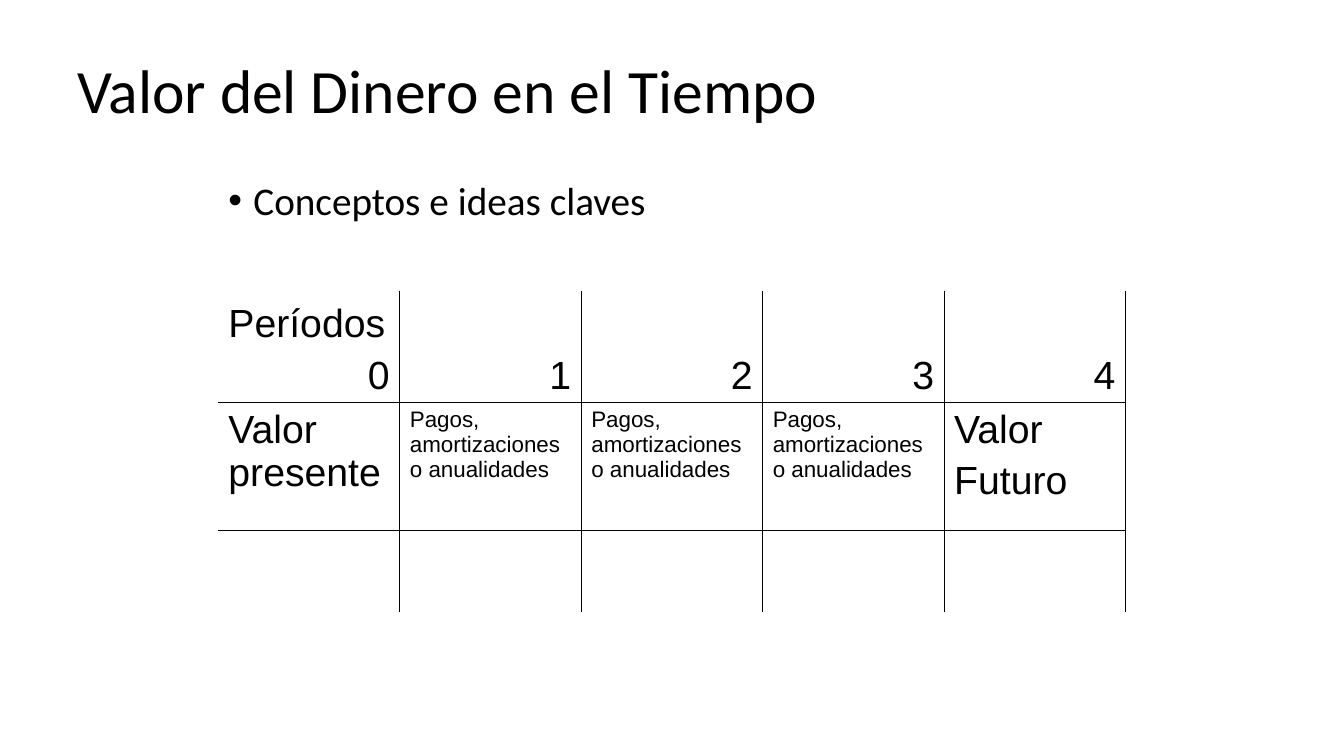
import lxml.etree
import pptx
import pptx.dml.color
import pptx.enum.text
import pptx.oxml.ns
import pptx.util

COLORS = {"text": "000000", "line": "000000", "background": "FFFFFF"}
NO_TABLE_STYLE = "{2D5ABB26-0587-4C30-8999-92F81FD0307C}"
LEFT = pptx.enum.text.PP_ALIGN.LEFT
RIGHT = pptx.enum.text.PP_ALIGN.RIGHT
TOP = pptx.enum.text.MSO_ANCHOR.TOP
MIDDLE = pptx.enum.text.MSO_ANCHOR.MIDDLE
BOTTOM = pptx.enum.text.MSO_ANCHOR.BOTTOM


def points(*values):
    return [pptx.util.Pt(value) for value in values]


def color(name):
    return pptx.dml.color.RGBColor.from_string(COLORS[name])


def add_element(parent, tag, **attributes):
    return lxml.etree.SubElement(parent, pptx.oxml.ns.qn(tag), attributes)


class SlideBuilder:
    heading_font = "Calibri"
    table_font = "Arial"
    border_width = 1

    def __init__(self, slide):
        self.slide = slide
        slide.background.fill.solid()
        slide.background.fill.fore_color.rgb = color("background")

    def style_paragraph(self, paragraph, text, font, size, align=LEFT):
        paragraph.text = text
        paragraph.alignment = align
        paragraph.font.name = font
        paragraph.font.size = pptx.util.Pt(size)
        paragraph.font.color.rgb = color("text")

    def add_text(self, text, box, size, anchor=TOP, bullet=False):
        frame = self.slide.shapes.add_textbox(*points(*box)).text_frame
        frame.word_wrap = True
        frame.vertical_anchor = anchor
        paragraph = frame.paragraphs[0]
        self.style_paragraph(paragraph, text, self.heading_font, size)
        paragraph.line_spacing = 0.9
        if bullet:
            paragraph.space_before = pptx.util.Pt(10)
            properties = paragraph._p.get_or_add_pPr()
            indent = pptx.util.Pt(18)
            properties.set("marL", str(indent))
            properties.set("indent", str(-indent))
            add_element(properties, "a:buFont", typeface="Arial")
            add_element(properties, "a:buChar", char="•")
            default_run = properties.find(pptx.oxml.ns.qn("a:defRPr"))
            if default_run is not None:
                properties.append(default_run)

    def add_border(self, cell, side):
        width = str(pptx.util.Pt(self.border_width))
        line = add_element(cell._tc.get_or_add_tcPr(), f"a:ln{side}", w=width)
        fill = add_element(line, "a:solidFill")
        add_element(fill, "a:srgbClr", val=COLORS["line"])

    def fill_cell(self, cell, lines, size, anchor):
        cell.vertical_anchor = anchor
        frame = cell.text_frame
        for index, (text, align) in enumerate(lines):
            paragraph = frame.add_paragraph() if index else frame.paragraphs[0]
            self.style_paragraph(paragraph, text, self.table_font, size, align)
            paragraph.space_before = pptx.util.Pt(size * 0.2)

    def add_timeline(self, contents, left, top, column_width, row_heights):
        columns = len(contents[0])
        box = points(left, top, column_width * columns, sum(row_heights))
        table = self.slide.shapes.add_table(len(row_heights), columns, *box).table
        table.first_row = table.horz_banding = False
        style = table._tbl.tblPr.find(pptx.oxml.ns.qn("a:tableStyleId"))
        style.text = NO_TABLE_STYLE
        for column in table.columns:
            column.width = pptx.util.Pt(column_width)
        for row_index, height in enumerate(row_heights):
            table.rows[row_index].height = pptx.util.Pt(height)
            for column_index in range(columns):
                cell = table.cell(row_index, column_index)
                if column_index > 0:
                    self.add_border(cell, "L")
                self.add_border(cell, "R")
                if row_index == 1:
                    self.add_border(cell, "T")
                if row_index == 0:
                    self.add_border(cell, "B")
                cell.fill.background()
                if row_index < len(contents):
                    lines, size = contents[row_index][column_index]
                    anchor = BOTTOM if row_index == 0 else TOP
                    self.fill_cell(cell, lines, size, anchor)


def main():
    presentation = pptx.Presentation()
    presentation.slide_width, presentation.slide_height = points(960, 540)
    slide = presentation.slides.add_slide(presentation.slide_layouts[6])
    builder = SlideBuilder(slide)
    builder.add_text("Valor del Dinero en el Tiempo", (48, 21.6, 864, 90), 44, MIDDLE)
    builder.add_text("Conceptos e ideas claves", (156, 126, 648, 59), 28, bullet=True)

    payment = ([("Pagos, amortizaciones o anualidades", LEFT)], 16)
    periods = [([("Períodos", LEFT), ("0", RIGHT)], 28)]
    periods += [([(str(period), RIGHT)], 28) for period in range(1, 5)]
    values = [
        ([("Valor presente", LEFT)], 28),
        *[payment] * 3,
        ([("Valor", LEFT), ("Futuro", LEFT)], 28),
    ]
    builder.add_timeline([periods, values], 156, 207.6, 129.6, (75, 91.4, 58.3))
    presentation.save("out.pptx")


if __name__ == "__main__":
    main()
